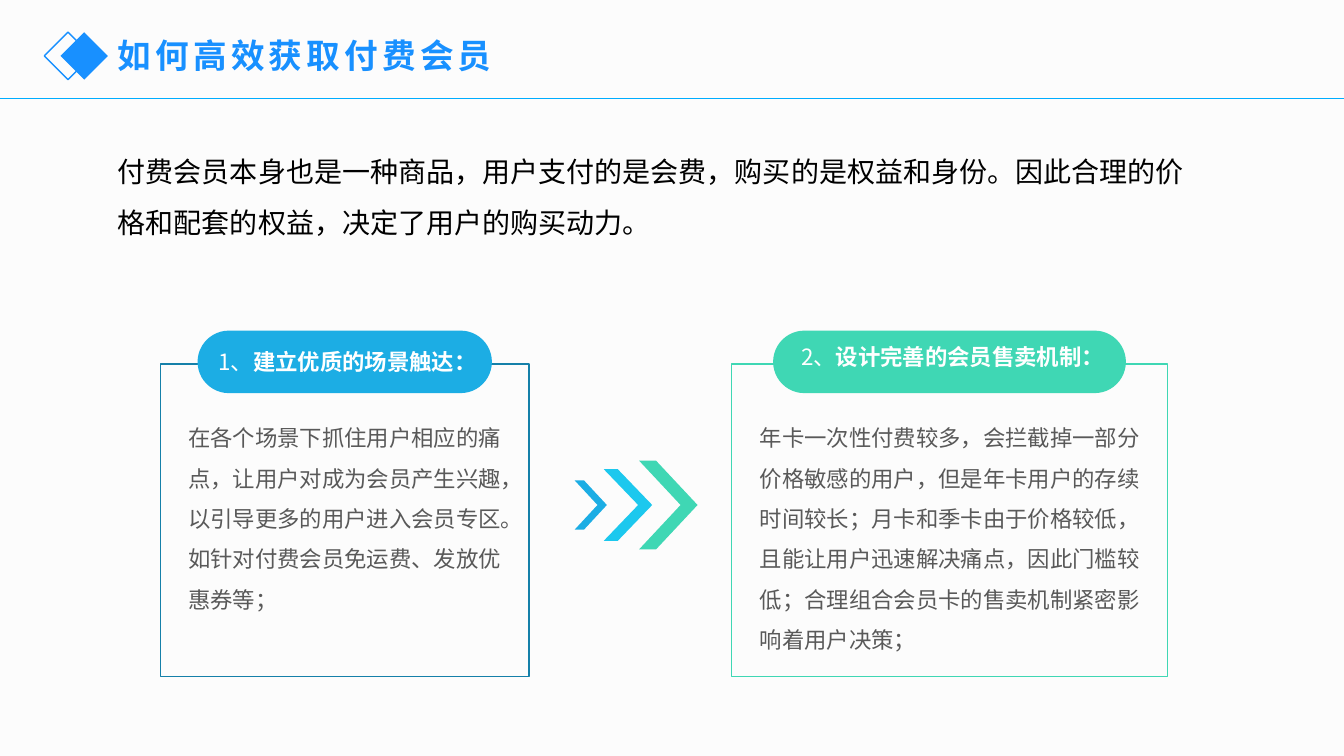
from dataclasses import dataclass
from lxml.etree import SubElement
from pptx import Presentation
from pptx.dml.color import RGBColor
from pptx.enum.shapes import MSO_CONNECTOR as Connector, MSO_SHAPE as Preset
from pptx.oxml.ns import qn
from pptx.util import Inches, Pt

COLUMNS, ROWS = 133.33, 75
WIDTH, HEIGHT = Inches(13.33), Inches(7.5)


@dataclass(frozen=True)
class Theme:
    """Colours, font and type sizes of the slide."""
    font: str = "Noto Sans CJK SC"
    background: str = "FCFCFC"
    title: str = "1890FF"
    rule: str = "00ADFF"
    black: str = "000000"
    white: str = "FFFFFF"
    grey: str = "595959"
    blue: str = "1CADE4"
    dark_blue: str = "1580A9"
    cyan: str = "1CC8EE"
    green: str = "3FD7B4"
    title_size: int = 24
    lead_size: int = 20
    body_size: int = 16


@dataclass(frozen=True)
class Box:
    """A rectangle in grid columns and rows."""
    left: float
    top: float
    width: float
    height: float

    def inner(self, left, top, width, height):
        """Return a box placed relative to this one's corner."""
        return Box(self.left + left, self.top + top, width, height)

    def place(self):
        """Return left, top, width and height as slide lengths."""
        return (
            int(WIDTH * self.left / COLUMNS), int(HEIGHT * self.top / ROWS),
            int(WIDTH * self.width / COLUMNS), int(HEIGHT * self.height / ROWS),
        )


THEME = Theme()


def add_preset(slide, preset, box, fill=None, outline=None, adjustment=None):
    """Draw a preset shape with a plain fill or outline."""
    shape = slide.shapes.add_shape(preset, *box.place())
    shape.shadow.inherit = False
    if adjustment is not None:
        shape.adjustments[0] = adjustment
    if fill:
        shape.fill.solid()
        shape.fill.fore_color.rgb = RGBColor.from_string(fill)
    else:
        shape.fill.background()
    if outline:
        shape.line.color.rgb = RGBColor.from_string(outline)
        shape.line.width = Pt(1)
    else:
        shape.line.fill.background()


def add_text(slide, box, parts, size, color, line_spacing=None, tracking=None):
    """Write one paragraph from (text, bold) parts."""
    frame = slide.shapes.add_textbox(*box.place()).text_frame
    frame.word_wrap = True
    paragraph = frame.paragraphs[0]
    if line_spacing:
        paragraph.line_spacing = line_spacing
    for text, bold in parts:
        run = paragraph.add_run()
        run.text = text
        run.font.size = Pt(size)
        run.font.bold = bold
        run.font.name = THEME.font
        run.font.color.rgb = RGBColor.from_string(color)
        properties = run.font._element
        SubElement(properties, qn("a:ea")).set("typeface", THEME.font)
        if tracking:
            properties.set("spc", str(tracking * 100))


def add_header(slide, box, title):
    """Draw the two diamonds, the title and the rule below them."""
    rule_left, rule_top, rule_width, _ = box.inner(0, box.height, box.width, 0).place()
    rule = slide.shapes.add_connector(
        Connector.STRAIGHT, rule_left, rule_top, rule_left + rule_width, rule_top)
    rule.line.color.rgb = RGBColor.from_string(THEME.rule)
    rule.line.width = Pt(1)
    SubElement(rule._element.spPr, qn("a:effectLst"))
    add_preset(slide, Preset.DIAMOND, box.inner(4.4, 3.2, 4.7, 4.7), outline=THEME.title)
    add_preset(slide, Preset.DIAMOND, box.inner(6, 3.2, 4.7, 4.7), fill=THEME.title)
    add_text(slide, box.inner(10.7, 3, 54.9, 5), [(title, True)],
             THEME.title_size, THEME.title, tracking=3)


def add_lead(slide, box, text):
    """Write the introductory paragraph."""
    add_text(slide, box, [(text, False)], THEME.lead_size, THEME.black, line_spacing=1.5)


def add_card(slide, box, number, heading, body, outline, fill, pill_width, label_offset):
    """Draw an outlined card with a pill heading centred on its top edge."""
    pill = box.inner((box.width - pill_width) / 2, -3.3, pill_width, 6.2)
    add_preset(slide, Preset.ROUNDED_RECTANGLE, box, outline=outline, adjustment=0)
    add_preset(slide, Preset.ROUNDED_RECTANGLE, pill, fill=fill, adjustment=0.5)
    add_text(slide, pill.inner(*label_offset, pill.width, 5.4),
             [(number, False), (heading, True)], THEME.body_size, THEME.white)
    add_text(slide, box.inner(1.8, 4.2, box.width - 1.8, 24.4), [(body, False)],
             THEME.body_size, THEME.grey, line_spacing=1.5)


def add_chevrons(slide, box):
    """Draw three growing chevrons on the middle line of the box."""
    chevrons = [
        (6.4, 5.8, 8.8, THEME.green),
        (2.9, 4.8, 7.1, THEME.cyan),
        (0, 3.2, 4.9, THEME.blue),
    ]
    for left, width, height, color in chevrons:
        chevron = box.inner(left, (box.height - height) / 2, width, height)
        add_preset(slide, Preset.CHEVRON, chevron, fill=color, adjustment=0.71)


def build_slide(presentation):
    """Compose the paid membership slide."""
    slide = presentation.slides.add_slide(presentation.slide_layouts[6])
    slide.background.fill.solid()
    slide.background.fill.fore_color.rgb = RGBColor.from_string(THEME.background)
    add_header(slide, Box(0, 0, COLUMNS, 9.8), "如何高效获取付费会员")
    add_lead(slide, Box(10.7, 13.2, 109.8, 13.8),
             "付费会员本身也是一种商品，用户支付的是会费，购买的是权益和身份。"
             "因此合理的价格和配套的权益，决定了用户的购买动力。")
    add_card(slide, Box(15.9, 36.1, 36.6, 31), "1、", "建立优质的场景触达：",
             "在各个场景下抓住用户相应的痛点，让用户对成为会员产生兴趣，"
             "以引导更多的用户进入会员专区。如针对付费会员免运费、发放优惠券等；",
             THEME.dark_blue, THEME.blue, 29.2, (1.1, 1.2))
    add_card(slide, Box(72.6, 36.1, 43.2, 31), "2、", "设计完善的会员售卖机制：",
             "年卡一次性付费较多，会拦截掉一部分价格敏感的用户，但是年卡用户的存续时间较长；"
             "月卡和季卡由于价格较低，且能让用户迅速解决痛点，因此门槛较低；"
             "合理组合会员卡的售卖机制紧密影响着用户决策；",
             THEME.green, THEME.green, 35, (1.8, 0.8))
    add_chevrons(slide, Box(57, 45.7, 12.2, 8.8))


def main():
    """Build and save the presentation."""
    presentation = Presentation()
    presentation.slide_width, presentation.slide_height = WIDTH, HEIGHT
    build_slide(presentation)
    presentation.save("out.pptx")


if __name__ == "__main__":
    main()
